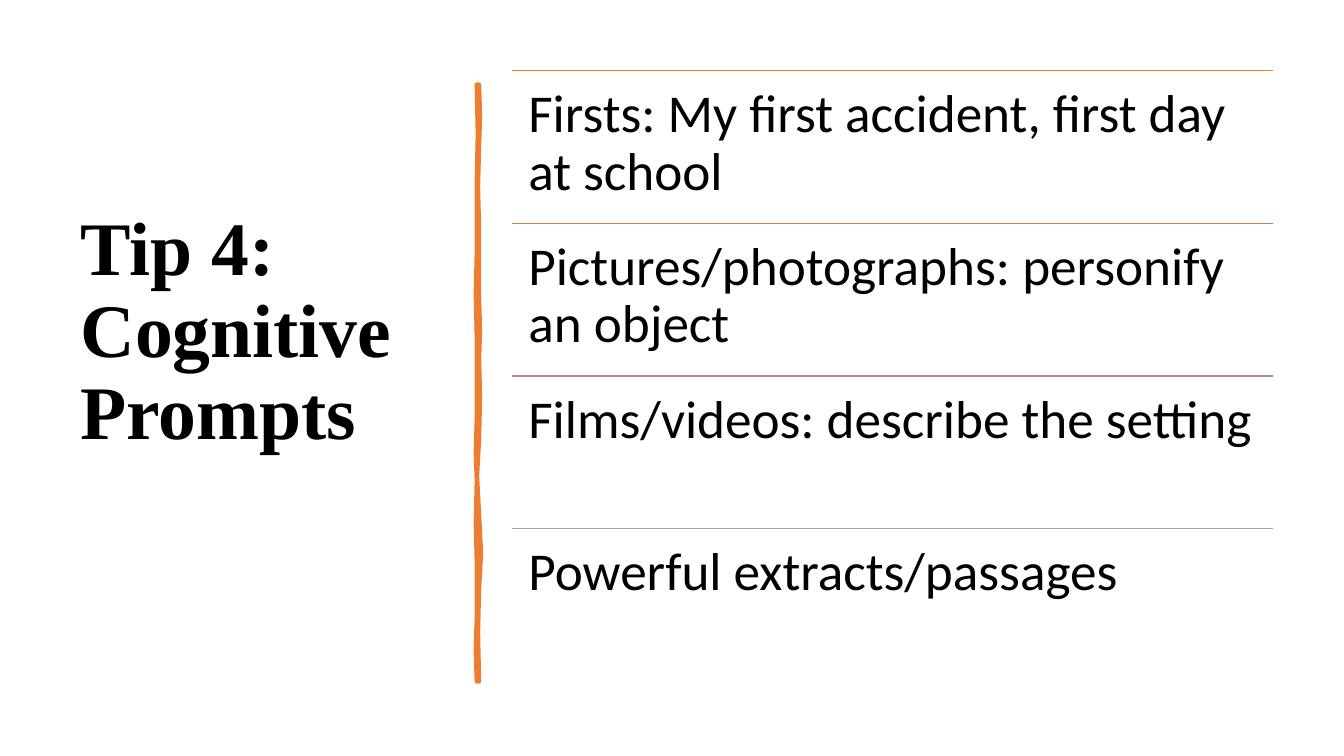
from dataclasses import dataclass

from lxml import etree
from pptx import Presentation
from pptx import util as u
from pptx.dml import color as c
from pptx.enum import shapes, text
from pptx.oxml import ns


@dataclass(frozen=True)
class Theme:
    ink: str = "000000"
    accent: str = "ED7D31"
    rules: tuple = ("ED7D31", "D17B5C", "B98A82", "A5A5A5")
    title_font: str = "Times New Roman"
    body_font: str = "Calibri"
    title_size: float = 54
    body_size: float = 38
    rule_width: float = 1
    brush_width: float = 3.25
    line_spacing: float = 0.9


PROMPTS = (
    "Firsts: My first accident, first day at school",
    "Pictures/photographs: personify an object",
    "Films/videos: describe the setting",
    "Powerful extracts/passages",
)
LIST_LEFT, LIST_TOP, LIST_WIDTH, LIST_HEIGHT = 5.08, 0.7, 7.55, 6.06

BRUSH_OUTLINE = (
    (4.75, 0.84), (4.76, 1.15), (4.75, 1.46), (4.74, 1.85), (4.75, 2.26),
    (4.75, 2.94), (4.76, 3.29), (4.75, 3.56), (4.76, 3.93), (4.75, 4.36),
    (4.73, 4.72), (4.75, 5.1), (4.77, 5.49), (4.75, 5.84), (4.74, 6.27),
    (4.75, 6.76), (4.73, 6.76), (4.72, 6.45), (4.73, 6.13), (4.73, 5.57),
    (4.72, 5.19), (4.73, 4.77), (4.72, 4.48), (4.73, 4.15), (4.73, 3.35),
    (4.72, 2.92), (4.73, 2.5), (4.73, 1.81), (4.74, 1.33), (4.73, 0.84),
)


class SlideWriter:
    def __init__(self, page, theme):
        self.page = page
        self.theme = theme

    def words(self, content, place, font, size, insets, bold=False,
              anchor=text.MSO_ANCHOR.TOP):
        box = self.page.shapes.add_textbox(*map(u.Inches, place))
        frame = box.text_frame
        frame.word_wrap = True
        frame.vertical_anchor = anchor
        (frame.margin_left, frame.margin_top,
         frame.margin_right, frame.margin_bottom) = map(u.Inches, insets)
        para = frame.paragraphs[0]
        para.line_spacing = self.theme.line_spacing
        span = para.add_run()
        span.text = content
        span.font.name = font
        span.font.size = u.Pt(size)
        span.font.bold = bold
        span.font.color.rgb = c.RGBColor.from_string(self.theme.ink)

    def rule(self, left, top, width, color):
        line = self.page.shapes.add_connector(
            shapes.MSO_CONNECTOR.STRAIGHT,
            u.Inches(left), u.Inches(top), u.Inches(left + width), u.Inches(top))
        line.line.color.rgb = c.RGBColor.from_string(color)
        line.line.width = u.Pt(self.theme.rule_width)
        etree.SubElement(line._element.spPr, ns.qn("a:effectLst"))

    def brush(self, outline):
        start, *points = [tuple(map(u.Inches, point)) for point in outline]
        builder = self.page.shapes.build_freeform(*start)
        builder.add_line_segments(points, close=True)
        stroke = builder.convert_to_shape()
        stroke.shadow.inherit = False
        color = c.RGBColor.from_string(self.theme.accent)
        stroke.fill.solid()
        stroke.fill.fore_color.rgb = color
        stroke.line.color.rgb = color
        stroke.line.width = u.Pt(self.theme.brush_width)


def main():
    deck = Presentation()
    deck.slide_width = u.Inches(13.33)
    deck.slide_height = u.Inches(7.5)
    theme = Theme()
    writer = SlideWriter(deck.slides.add_slide(deck.slide_layouts[6]), theme)

    writer.words("Tip 4: Cognitive Prompts", (0.7, 0.7, 3.74, 6.11),
                 theme.title_font, theme.title_size, (0.1, 0.05, 0.1, 0.95),
                 bold=True, anchor=text.MSO_ANCHOR.MIDDLE)
    writer.brush(BRUSH_OUTLINE)

    row_height = LIST_HEIGHT / len(PROMPTS)
    for index, (prompt, color) in enumerate(zip(PROMPTS, theme.rules)):
        top = LIST_TOP + index * row_height
        writer.rule(LIST_LEFT, top, LIST_WIDTH, color)
        writer.words(prompt, (LIST_LEFT, top, LIST_WIDTH, row_height),
                     theme.body_font, theme.body_size, (0.16,) * 4)

    deck.save("out.pptx")


if __name__ == "__main__":
    main()
